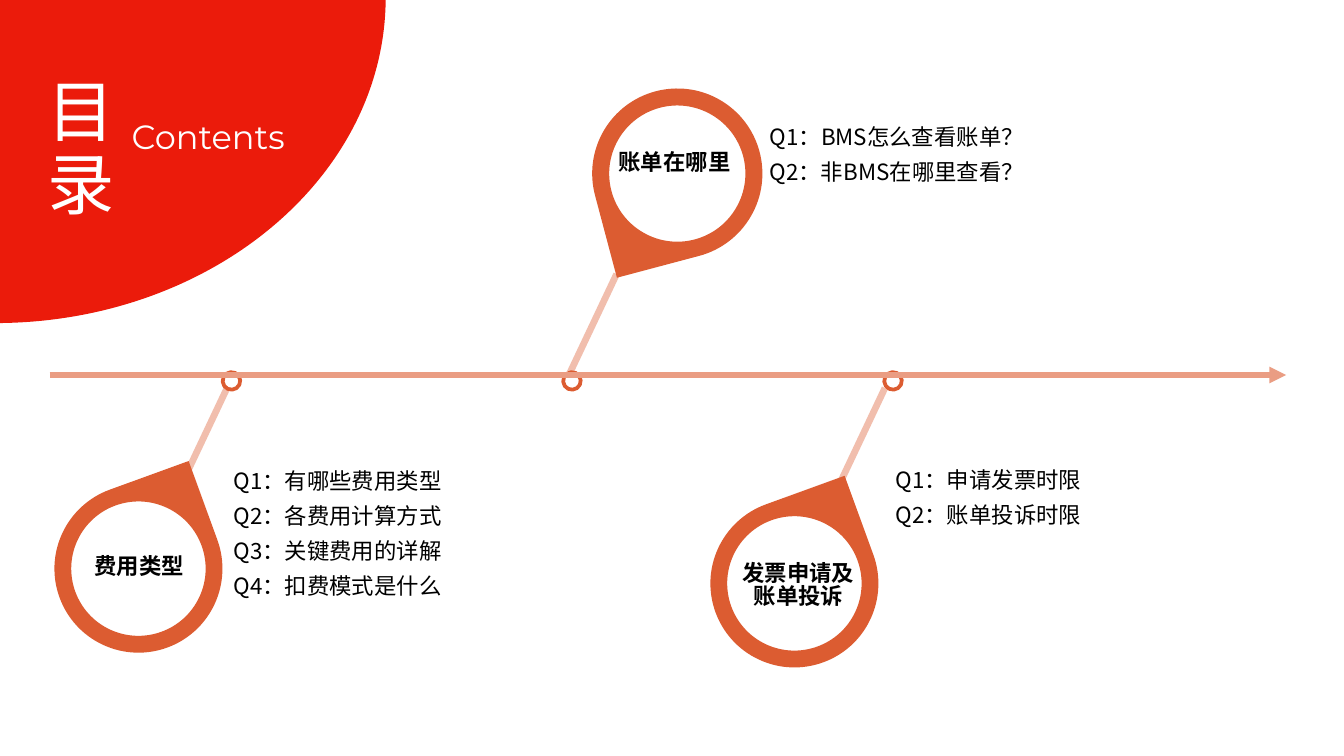
from dataclasses import dataclass
from math import cos, pi, sin, sqrt, tan

from lxml import etree
from pptx import Presentation
from pptx.dml.color import RGBColor
from pptx.enum.shapes import MSO_CONNECTOR, MSO_SHAPE
from pptx.enum.text import MSO_ANCHOR, MSO_AUTO_SIZE, PP_ALIGN
from pptx.oxml.ns import qn
from pptx.util import Pt

RECT, OVAL = MSO_SHAPE.RECTANGLE, MSO_SHAPE.OVAL
STRAIGHT = MSO_CONNECTOR.STRAIGHT
TOP, FIXED = MSO_ANCHOR.TOP, MSO_AUTO_SIZE.NONE
LEFT, CENTER, JUST = PP_ALIGN.LEFT, PP_ALIGN.CENTER, PP_ALIGN.JUSTIFY


@dataclass(frozen=True)
class Theme:
    red: str = "EB1B0B"
    pin: str = "DC5C31"
    stem: str = "F1BEAD"
    axis: str = "EA9D83"
    white: str = "FFFFFF"
    black: str = "000000"
    han: str = "Noto Sans CJK SC"
    latin: str = "Montserrat"
    title: int = 36
    sub: int = 18
    body: int = 12


THEME = Theme()
TILT = 25.3
HOLE = 0.8
DOT = 9.4
STEM = 3.6
GRAIN = 100
SNUG = (5, 3)
ROOMY = (7.2, 3.6)

ITEMS = [
    dict(box=(33.1, 241.9, 90), turn=25, stem=(74.5, -4.3, 70.6), dot=(90.9, -37.8),
         label=["费用类型"], spot=(11.9, 52.6, 59, 18.7), wrap=False,
         notes=["Q1：有哪些费用类型\vQ2：各费用计算方式", "Q3：关键费用的详解", "Q4：扣费模式是什么"],
         area=(84.9, 0.7, 131.8, 82.8)),
    dict(box=(312.5, 46.1, 91.2), turn=210.1, stem=(5.4, 127.1, 58.3), dot=(-6.1, 158),
         label=["账单在哪里"], spot=(-2.2, 31.9, 102.2, 18.7), wrap=True,
         notes=["Q1：BMS怎么查看账单？", "Q2：非BMS在哪里查看？"],
         area=(92.7, 12.2, 141.8, 45.4)),
    dict(box=(384.5, 249.8, 90), turn=25, stem=(74.5, -10, 70.6), dot=(93.9, -45.7),
         label=["发票申请及", "账单投诉"], spot=(7.6, 48.3, 71.3, 31.7), wrap=False,
         notes=["Q1：申请发票时限", "Q2：账单投诉时限"],
         area=(88.2, -7.9, 125.3, 45.4)),
]


def rgb(code):
    return RGBColor.from_string(code)


def paint(shape, fill, line=None, width=2):
    shape.shadow.inherit = False
    shape.fill.solid()
    shape.fill.fore_color.rgb = rgb(fill)
    if line:
        shape.line.color.rgb = rgb(line)
        shape.line.width = Pt(width)
    else:
        shape.line.fill.background()


def write(slide, lines, box, *, size=THEME.body, color=THEME.black, face=THEME.han,
          bold=False, align=LEFT, space=1.0, pad=SNUG, wrap=True, shape=None):
    spot = [Pt(v) for v in box]
    shape = shape or slide.shapes.add_textbox(*spot)
    shape.left, shape.top, shape.width, shape.height = spot
    frame = shape.text_frame
    frame.word_wrap, frame.auto_size, frame.vertical_anchor = wrap, FIXED, TOP
    frame.margin_left = frame.margin_right = Pt(pad[0])
    frame.margin_top = frame.margin_bottom = Pt(pad[1])
    for i, line in enumerate(lines):
        para = frame.add_paragraph() if i else frame.paragraphs[0]
        para.text = line
        para.alignment, para.line_spacing = align, space
        para.space_before = Pt(0)
        for run in para.runs:
            font = run.font
            font.name, font.size, font.bold = face, Pt(size), bold
            font.color.rgb = rgb(color)
            east = etree.SubElement(run._r.get_or_add_rPr(), qn("a:ea"))
            east.set("typeface", face)


def arc(x, y, wide, high, start, end):
    k = 4 / 3 * tan((end - start) / 4)

    def spot(t, pull=0):
        return (x + wide * (cos(t) - pull * sin(t)), y + high * (sin(t) + pull * cos(t)))

    return [spot(start, k), spot(end, -k), spot(end)]


def outline(slide, loops, fill):
    form = None
    for start, *steps in loops:
        x, y = (v * GRAIN for v in start)
        if form is None:
            form = slide.shapes.build_freeform(x, y, scale=Pt(1) / GRAIN)
        else:
            form.move_to(x, y)
        form.add_line_segments([(a * GRAIN, b * GRAIN) for step in steps for a, b in step])
    shape = form.convert_to_shape()
    edges = iter(list(shape._element.iter(qn("a:lnTo"))))
    for step in (step for loop in loops for step in loop[1:]):
        group = [next(edges) for _ in step]
        if len(group) == 3:
            group[0].tag = qn("a:cubicBezTo")
            for edge in group[1:]:
                group[0].append(edge[0])
                edge.getparent().remove(edge)
    paint(shape, fill)
    return shape


def solid(slide, kind, x, y, wide, high, fill, line=None):
    shape = slide.shapes.add_shape(
        kind, Pt(x - wide / 2), Pt(y - high / 2), Pt(wide), Pt(high))
    shape.rotation = TILT
    paint(shape, fill, line)


def draw_pin(slide, left, top, size, turn):
    r = size / 2
    x, y = left + r, top + r * sqrt(2)
    side = r / sqrt(2)
    bends = [-pi / 4, 0, pi / 2, pi, 5 * pi / 4]
    drop = [(x, top), [(x + side, y - side)]]
    drop += [arc(x, y, r, r, a, b) for a, b in zip(bends, bends[1:])]
    drop.append([(x, top)])
    gap = r * HOLE
    hole = [(x + gap, y)] + [arc(x, y, gap, gap, -i * pi / 2, -(i + 1) * pi / 2)
                             for i in range(4)]
    outline(slide, [drop, hole], THEME.pin).rotation = turn


def draw_item(slide, box, turn, stem, dot, label, spot, wrap, notes, area):
    left, top, size = box

    def place(x, y, *rest):
        return (left + x, top + y, *rest)

    x, y, high = place(*stem)
    solid(slide, RECT, x, y, STEM, high, THEME.stem)
    solid(slide, OVAL, *place(*dot), DOT, DOT, THEME.white, THEME.pin)
    draw_pin(slide, left, top, size, turn)
    write(slide, label, place(*spot), bold=True, align=CENTER, space=Pt(12.6), wrap=wrap)
    write(slide, notes, place(*area), space=1.3, pad=ROOMY)


def draw_head(slide, left, top, wide, high):
    corner = [(left, top), [(left + wide, top)], arc(left, top, wide, high, 0, pi / 2),
              [(left, top)]]
    outline(slide, [corner], THEME.red)
    title = slide.shapes.title
    title._element.getparent().append(title._element)
    write(slide, ["目录"], (left + 6.4, top + 40.4, 80, 92.9), size=THEME.title,
          color=THEME.white, align=CENTER, space=0.9, shape=title)
    write(slide, ["Contents"], (left + 68.4, top + 62.8, 107.3, 27.4), size=THEME.sub,
          color=THEME.white, face=THEME.latin, align=JUST, space=0.9)


def draw_axis(slide, left, top, wide):
    axis = slide.shapes.add_connector(STRAIGHT, Pt(left), Pt(top), Pt(left + wide), Pt(top))
    axis.line.color.rgb = rgb(THEME.axis)
    axis.line.width = Pt(3)
    etree.SubElement(axis.line._get_or_add_ln(), qn("a:tailEnd")).set("type", "triangle")
    etree.SubElement(axis._element.spPr, qn("a:effectLst"))


def main():
    deck = Presentation()
    deck.slide_width, deck.slide_height = Pt(720), Pt(405)
    slide = deck.slides.add_slide(deck.slide_layouts[5])
    draw_head(slide, -2.9, -1.4, 209.5, 174.5)
    for item in ITEMS:
        draw_item(slide, **item)
    draw_axis(slide, 26.6, 200.9, 662.4)
    deck.save("out.pptx")


if __name__ == "__main__":
    main()
